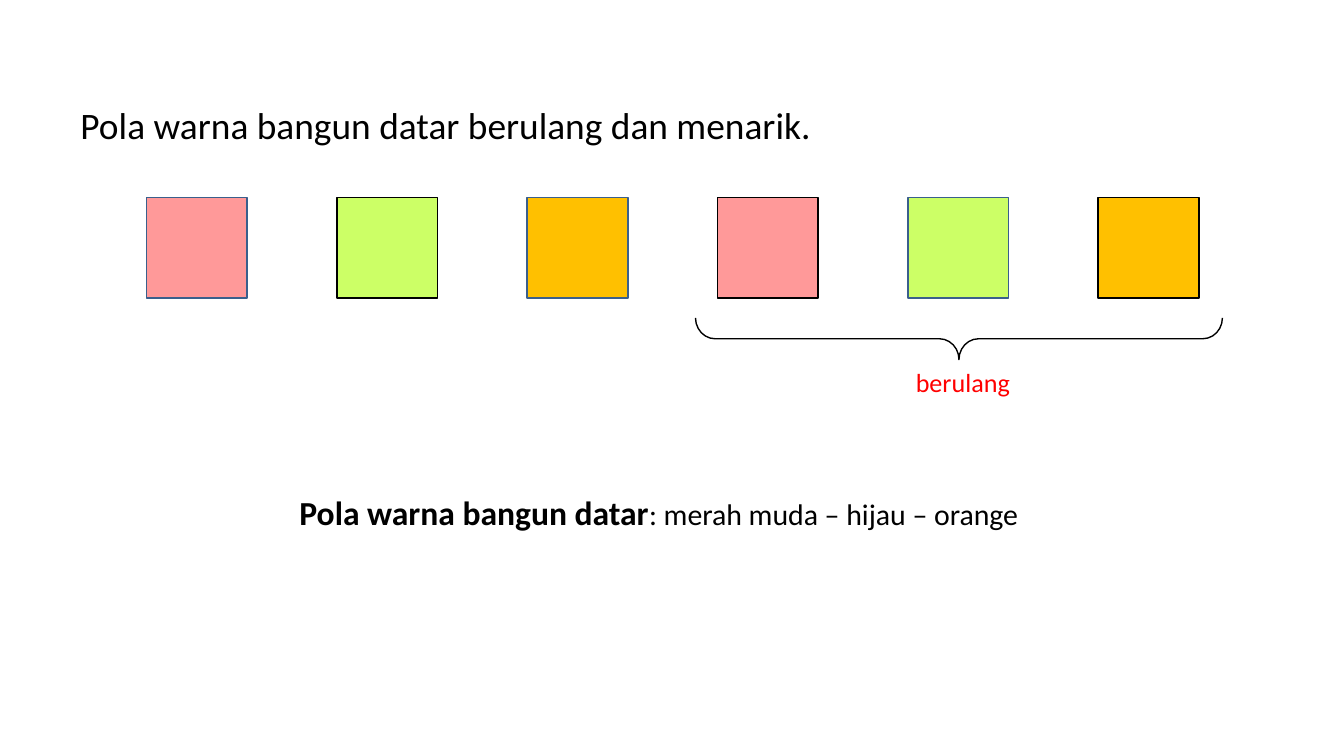
"""Build a slide about a repeating colour pattern of squares."""
from pptx import Presentation
from pptx.dml.color import RGBColor
from pptx.enum.shapes import MSO_SHAPE
from pptx.enum.text import MSO_AUTO_SIZE, PP_ALIGN
from pptx.util import Inches, Pt

RECTANGLE = MSO_SHAPE.RECTANGLE
LEFT_BRACE = MSO_SHAPE.LEFT_BRACE
FIT_SHAPE = MSO_AUTO_SIZE.SHAPE_TO_FIT_TEXT
LEFT = PP_ALIGN.LEFT
CENTER = PP_ALIGN.CENTER

BLACK = "000000"
BLUE = "3A5F8C"
RED = "FF0000"
PATTERN = ["FF9999", "CCFF66", "FFC000"]
OUTLINES = [BLUE, BLACK]


def color(value):
    return RGBColor.from_string(value)


def add_text(shapes, box, *runs, fill=BLACK, align=LEFT):
    """Add a text box; each run is (text, size, bold)."""
    shape = shapes.add_textbox(*[Inches(length) for length in box])
    frame = shape.text_frame
    frame.word_wrap = False
    frame.auto_size = FIT_SHAPE
    paragraph = frame.paragraphs[0]
    paragraph.alignment = align
    for text, size, bold in runs:
        run = paragraph.add_run()
        run.text = text
        run.font.name = "Calibri"
        run.font.size = Pt(size)
        run.font.bold = bold
        run.font.color.rgb = color(fill)


presentation = Presentation()
presentation.slide_width = Inches(10)
presentation.slide_height = Inches(10 * 9 / 16)
slide = presentation.slides.add_slide(presentation.slide_layouts[6])

add_text(slide.shapes, (0.5, 0.71, 5.69, 0.44),
         ("Pola warna bangun datar berulang dan menarik.", 20, False))

square_count = 6
first_left, last_left = 1.09, 8.17
pitch = (last_left - first_left) / (square_count - 1)
squares = slide.shapes.add_group_shape()
for index in range(square_count):
    square = squares.shapes.add_shape(
        RECTANGLE, Inches(first_left + index * pitch), Inches(1.47),
        Inches(0.75), Inches(0.75))
    square.shadow.inherit = False
    square.fill.solid()
    square.fill.fore_color.rgb = color(PATTERN[index % len(PATTERN)])
    square.line.color.rgb = color(OUTLINES[index % len(OUTLINES)])
    square.line.width = Pt(1)

repeat = slide.shapes.add_group_shape()
brace = repeat.shapes.add_shape(
    LEFT_BRACE, Inches(6.98), Inches(0.56), Inches(0.31), Inches(3.92))
brace.rotation = 270
brace.adjustments[0] = 0.47
brace.shadow.inherit = False
brace.fill.background()
brace.line.color.rgb = color(BLACK)
brace.line.width = Pt(0.75)
add_text(repeat.shapes, (6.71, 2.68, 0.91, 0.34),
         ("berulang", 14, False), fill=RED, align=CENTER)

add_text(slide.shapes, (2.13, 3.61, 5.66, 0.4),
         ("Pola warna bangun datar", 18, True),
         (": merah muda – hijau – orange", 16, False))

presentation.save("out.pptx")
